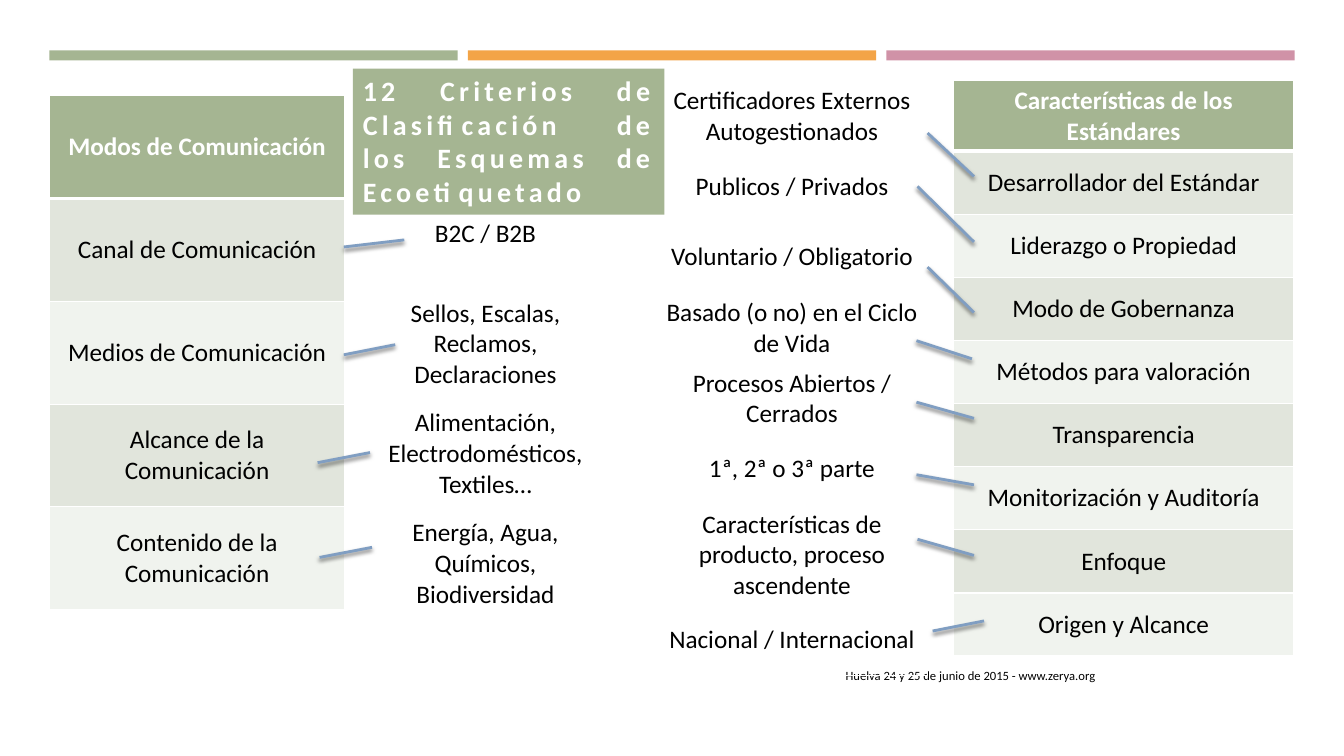
from dataclasses import dataclass

from lxml import etree
from pptx import Presentation
from pptx.dml.color import RGBColor
from pptx.enum.shapes import MSO_CONNECTOR, MSO_SHAPE
from pptx.enum.text import MSO_ANCHOR, MSO_AUTO_SIZE, PP_ALIGN
from pptx.oxml import parse_xml
from pptx.oxml.ns import nsdecls, qn
from pptx.util import Inches, Pt

RECT = MSO_SHAPE.RECTANGLE
STRAIGHT = MSO_CONNECTOR.STRAIGHT
MIDDLE = MSO_ANCHOR.MIDDLE
GROW = MSO_AUTO_SIZE.SHAPE_TO_FIT_TEXT
CENTER, RIGHT, JUSTIFY = PP_ALIGN.CENTER, PP_ALIGN.RIGHT, PP_ALIGN.JUSTIFY


@dataclass(frozen=True)
class Theme:
    font: str = "Calibri"
    green: str = "A5B592"
    orange: str = "F3A447"
    pink: str = "D092A7"
    blue: str = "809EC2"
    bands: tuple = ("E1E5DC", "F0F3EE")
    white: str = "FFFFFF"
    black: str = "000000"
    title: int = 20
    body: int = 18
    footer: int = 9


THEME = Theme()

MODES = ["Modos de Comunicación", "Canal de Comunicación", "Medios de Comunicación",
         "Alcance de la Comunicación", "Contenido de la Comunicación"]
MODE_EXAMPLES = ["B2C / B2B", "Sellos, Escalas, Reclamos, Declaraciones",
                 "Alimentación, Electrodomésticos, Textiles…",
                 "Energía, Agua, Químicos, Biodiversidad"]
STANDARDS = ["Características de los Estándares", "Desarrollador del Estándar",
             "Liderazgo o Propiedad", "Modo de Gobernanza", "Métodos para valoración",
             "Transparencia", "Monitorización y Auditoría", "Enfoque", "Origen y Alcance"]
STANDARD_EXAMPLES = ["Certificadores Externos Autogestionados", "Publicos / Privados",
                     "Voluntario / Obligatorio", "Basado (o no) en el Ciclo de Vida",
                     "Procesos Abiertos / Cerrados", "1ª, 2ª o 3ª parte",
                     "Características de producto, proceso ascendente",
                     "Nacional / Internacional"]
LINKS = [
    (3.41, 2.45, 4.01, 2.38), (3.41, 3.52, 3.92, 3.42),
    (3.15, 4.59, 3.67, 4.49), (3.17, 5.53, 3.69, 5.43),
    (9.2, 1.32, 9.66, 1.75), (9.1, 1.85, 9.66, 2.4),
    (9.2, 2.65, 9.66, 3.1), (9.09, 3.38, 9.64, 3.56),
    (9.09, 3.99, 9.66, 4.15), (9.09, 4.71, 9.66, 4.81),
    (9.1, 5.35, 9.66, 5.51), (9.25, 6.26, 9.76, 6.16),
]


def rgb(color):
    return RGBColor.from_string(color)


def write(tf, text, color, size, align, bold=False):
    p = tf.paragraphs[0]
    p.alignment = align
    r = p.add_run()
    r.text = text
    font = {"name": THEME.font, "size": Pt(size), "bold": bold}
    for name, value in font.items():
        setattr(r.font, name, value)
    r.font.color.rgb = rgb(color)
    return r


def add_block(s, x, y, w, h, color):
    sp = s.shapes.add_shape(RECT, *map(Inches, (x, y, w, h)))
    sp.shadow.inherit = False
    sp.fill.solid()
    sp.fill.fore_color.rgb = rgb(color)
    sp.line.fill.background()
    return sp


def add_title(s, text):
    sp = add_block(s, 3.5, 0.68, 3.09, 1.45, THEME.green)
    tf = sp.text_frame
    frame = {"word_wrap": True, "auto_size": GROW, "vertical_anchor": MSO_ANCHOR.TOP}
    for name, value in frame.items():
        setattr(tf, name, value)
    r = write(tf, text, THEME.white, THEME.title, JUSTIFY, bold=True)
    r.font._element.set("spc", "300")


def add_footer(s, text):
    tf = s.shapes.add_textbox(*map(Inches, (7.85, 6.5, 3.11, 0.4))).text_frame
    tf.word_wrap = True
    tf.vertical_anchor = MIDDLE
    write(tf, text, THEME.black, THEME.footer, RIGHT)


def set_borders(cell, bottom):
    tcPr = cell._tc.get_or_add_tcPr()
    for side, width in (("L", 1), ("R", 1), ("T", 1), ("B", bottom)):
        tcPr.append(parse_xml(
            f'<a:ln{side} {nsdecls("a")} w="{Pt(width)}"><a:solidFill>'
            f'<a:srgbClr val="{THEME.white}"/></a:solidFill></a:ln{side}>'))


def add_column(s, x, y, w, heights, texts, banded):
    """One-column table; a banded one starts with a header row."""
    frame = s.shapes.add_table(len(texts), 1, *map(Inches, (x, y, w, sum(heights))))
    table = frame.table
    table.first_row = table.horz_banding = False
    for i, (text, height) in enumerate(zip(texts, heights)):
        table.rows[i].height = Inches(height)
        cell = table.cell(i, 0)
        cell.vertical_anchor = MIDDLE
        header = banded and i == 0
        if banded:
            set_borders(cell, 3 if header else 1)
            cell.fill.solid()
            fill = THEME.green if header else THEME.bands[(i - 1) % 2]
            cell.fill.fore_color.rgb = rgb(fill)
        else:
            cell.fill.background()
        color = THEME.white if header else THEME.black
        write(cell.text_frame, text, color, THEME.body, CENTER, bold=header)


def add_link(s, x1, y1, x2, y2):
    line = s.shapes.add_connector(STRAIGHT, *map(Inches, (x1, y1, x2, y2)))
    line.line.color.rgb = rgb(THEME.blue)
    line.line.width = Pt(2)
    # Soft shadow straight below the line
    effects = etree.SubElement(line._element.spPr, qn("a:effectLst"))
    shadow = etree.SubElement(effects, qn("a:outerShdw"), blurRad=str(Pt(3)),
                              dist=str(Pt(2)), dir="5400000", rotWithShape="0")
    color = etree.SubElement(shadow, qn("a:srgbClr"), val=THEME.black)
    etree.SubElement(color, qn("a:alpha"), val="55000")


def main():
    prs = Presentation()
    prs.slide_width, prs.slide_height = Inches(13.33), Inches(7.5)
    s = prs.slides.add_slide(prs.slide_layouts[6])

    # Top stripes
    for i, color in enumerate((THEME.green, THEME.orange, THEME.pink)):
        add_block(s, 0.49 + i * 4.15, 0.5, 4.05, 0.1, color)

    add_footer(s, "Huelva 24 y 25 de junio de 2015 - www.zerya.org")

    # Criteria and their examples
    add_column(s, 0.49, 0.95, 2.93, [1.02] * 5, MODES, True)
    add_column(s, 9.46, 0.8, 3.37, [0.69] + [0.626] * 8, STANDARDS, True)
    add_column(s, 3.68, 1.78, 2.27, [1.09] * 4, MODE_EXAMPLES, False)
    add_column(s, 6.51, 0.8, 2.69, [0.7] * 6 + [0.87, 0.7], STANDARD_EXAMPLES, False)

    add_title(s, "12 Criterios de Clasificación de los Esquemas de Ecoetiquetado")

    # Links between criteria and examples
    for link in LINKS:
        add_link(s, *link)

    prs.save("out.pptx")


if __name__ == "__main__":
    main()
